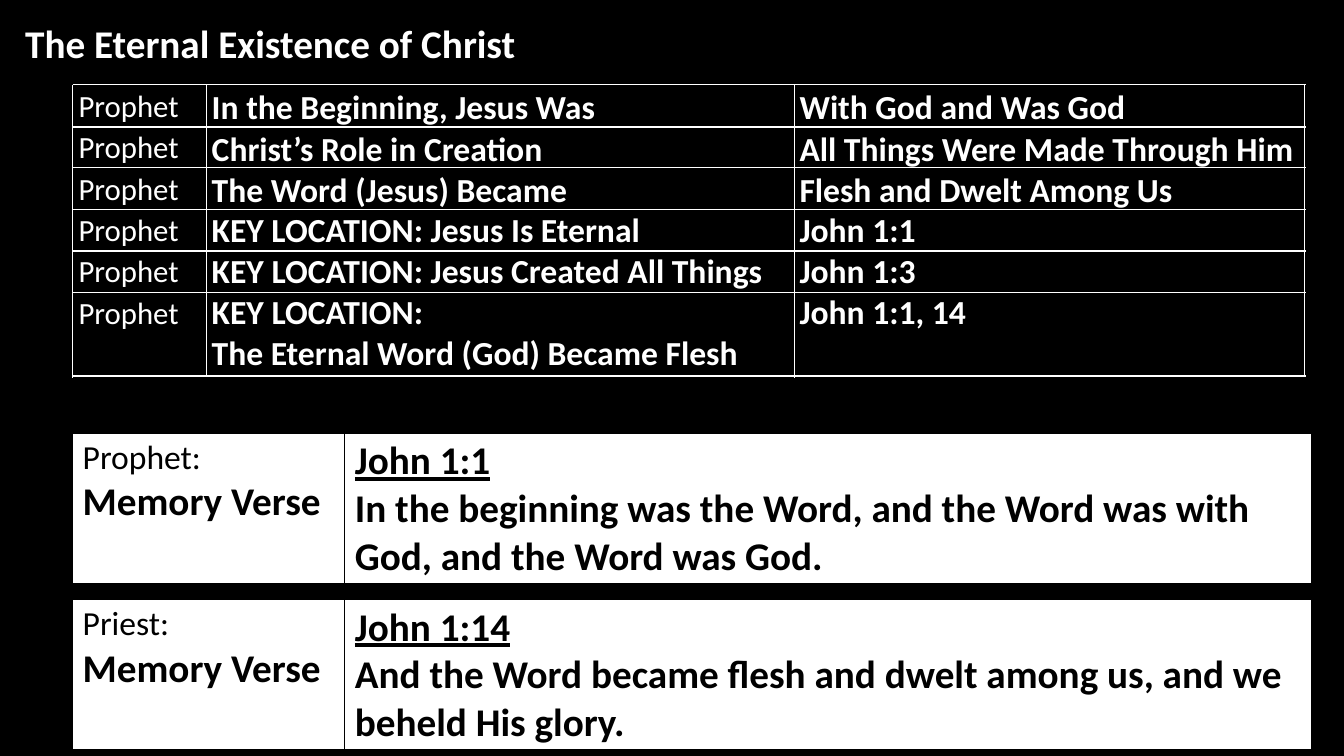
"""Build the slide on the eternal existence of Christ with its fact grid and memory verses."""
from dataclasses import dataclass

import lxml.etree
import pptx
import pptx.dml.color
import pptx.enum.shapes
import pptx.enum.text
import pptx.oxml.ns
import pptx.slide
import pptx.table
import pptx.text.text
import pptx.util

Inches = pptx.util.Inches
qualified = pptx.oxml.ns.qn


@dataclass(frozen=True)
class Theme:
    font: str = "Calibri"
    black: str = "000000"
    white: str = "FFFFFF"
    heading_size: int = 28
    fact_size: int = 24
    label_size: int = 22
    line_points: int = 1


@dataclass(frozen=True)
class Phrase:
    text: str
    width: float


@dataclass(frozen=True)
class Fact:
    top: float
    statement: tuple[Phrase, ...]
    answer: Phrase


@dataclass(frozen=True)
class MemoryVerse:
    role: str
    reference: str
    words: str
    top: float


THEME = Theme()
LEFT, RIGHT = 0.72, 12.95
ROW_PITCH = 0.41
LABEL_LEFT, STATEMENT_LEFT, ANSWER_LEFT = 0.78, 2.1, 7.93
FIRST_LABEL_TOP = 0.86
GRID_TOP = 0.84
HORIZONTAL_LINES = (GRID_TOP, 1.26, 1.66, 2.08, 2.49, 2.9, 3.73)
VERTICAL_LINES = ((LEFT, 3.75), (2.05, 3.73), (7.88, 3.75), (12.94, 3.73))
VERSE_COLUMNS = (2.7, 9.59)
VERSE_HEIGHT = 1.49

FACTS = (
    Fact(0.85, (Phrase("In the Beginning, Jesus Was", 3.99),), Phrase("With God and Was God", 3.42)),
    Fact(1.27, (Phrase("Christ’s Role in Creation", 3.49),),
         Phrase("All Things Were Made Through Him", 5.09)),
    Fact(1.68, (Phrase("The Word (Jesus) Became", 3.73),), Phrase("Flesh and Dwelt Among Us", 3.88)),
    Fact(2.07, (Phrase("KEY LOCATION: Jesus Is Eternal", 4.47),), Phrase("John 1:1", 1.33)),
    Fact(2.48, (Phrase("KEY LOCATION: Jesus Created All Things", 5.68),), Phrase("John 1:3", 1.33)),
    Fact(2.89, (Phrase("KEY LOCATION:", 2.38), Phrase("The Eternal Word (God) Became Flesh", 5.43)),
         Phrase("John 1:1, 14", 1.83)),
)
VERSES = (
    MemoryVerse("Priest:", "John 1:14",
                "And the Word became flesh and dwelt among us, and we beheld His glory.", 5.95),
    MemoryVerse("Prophet:", "John 1:1",
                "In the beginning was the Word, and the Word was with God, and the Word was God.", 4.3),
)


def to_color(value: str) -> pptx.dml.color.RGBColor:
    return pptx.dml.color.RGBColor.from_string(value)


def write_text(paragraph: pptx.text.text._Paragraph, text: str, *, size: int, color: str,
               bold: bool = True, underline: bool = False) -> None:
    paragraph.alignment = pptx.enum.text.PP_ALIGN.LEFT
    run = paragraph.add_run()
    run.text = text
    run.font.name = THEME.font
    run.font.size = pptx.util.Pt(size)
    run.font.bold = bold
    run.font.underline = underline
    run.font.color.rgb = to_color(color)


def add_title(slide: pptx.slide.Slide, text: str) -> None:
    title = slide.shapes.title
    title.left, title.top = Inches(0.15), Inches(0.14)
    title.width, title.height = Inches(11.66), Inches(0.57)
    frame = title.text_frame
    frame.word_wrap = True
    frame.auto_size = pptx.enum.text.MSO_AUTO_SIZE.SHAPE_TO_FIT_TEXT
    frame.vertical_anchor = pptx.enum.text.MSO_ANCHOR.TOP
    write_text(frame.paragraphs[0], text, size=THEME.heading_size, color=THEME.white)


def draw_borders(cell: pptx.table._Cell, color: str) -> None:
    properties = cell._tc.get_or_add_tcPr()
    for position, side in enumerate(("a:lnL", "a:lnR", "a:lnT", "a:lnB")):
        border = lxml.etree.Element(qualified(side), w=str(pptx.util.Pt(THEME.line_points)))
        fill = lxml.etree.SubElement(border, qualified("a:solidFill"))
        lxml.etree.SubElement(fill, qualified("a:srgbClr"), val=color)
        properties.insert(position, border)


def add_verse(slide: pptx.slide.Slide, verse: MemoryVerse) -> None:
    frame = slide.shapes.add_table(1, len(VERSE_COLUMNS), Inches(LEFT), Inches(verse.top),
                                   Inches(sum(VERSE_COLUMNS)), Inches(VERSE_HEIGHT))
    table = frame.table
    table.first_row = table.horz_banding = False
    for column, width in zip(table.columns, VERSE_COLUMNS):
        column.width = Inches(width)
    label, passage = table.rows[0].cells
    for cell in (label, passage):
        cell.margin_top, cell.margin_bottom = Inches(0.04), Inches(0.02)
        cell.fill.solid()
        cell.fill.fore_color.rgb = to_color(THEME.white)
        draw_borders(cell, THEME.black)
        cell.text_frame.add_paragraph()
    role, caption = label.text_frame.paragraphs
    reference, words = passage.text_frame.paragraphs
    write_text(role, verse.role, size=THEME.fact_size, color=THEME.black, bold=False)
    write_text(caption, "Memory Verse", size=THEME.heading_size, color=THEME.black)
    write_text(reference, verse.reference, size=THEME.heading_size, color=THEME.black, underline=True)
    write_text(words, verse.words, size=THEME.heading_size, color=THEME.black)


def add_line(slide: pptx.slide.Slide, start: tuple[float, float], end: tuple[float, float]) -> None:
    line = slide.shapes.add_connector(pptx.enum.shapes.MSO_CONNECTOR.STRAIGHT,
                                      *map(Inches, start), *map(Inches, end))
    line.line.color.rgb = to_color(THEME.white)
    line.line.width = pptx.util.Pt(THEME.line_points)
    lxml.etree.SubElement(line._element.spPr, qualified("a:effectLst"))


def add_phrase(slide: pptx.slide.Slide, phrase: Phrase, left: float, top: float, *,
               size: int = THEME.fact_size, height: float = 0.5, bold: bool = True) -> None:
    box = slide.shapes.add_textbox(Inches(left), Inches(top), Inches(phrase.width), Inches(height))
    frame = box.text_frame
    frame.word_wrap = False
    frame.auto_size = pptx.enum.text.MSO_AUTO_SIZE.SHAPE_TO_FIT_TEXT
    frame.margin_left = frame.margin_right = frame.margin_top = frame.margin_bottom = 0
    write_text(frame.paragraphs[0], phrase.text, size=size, color=THEME.white, bold=bold)


def add_facts(slide: pptx.slide.Slide) -> None:
    for x, bottom in VERTICAL_LINES:
        add_line(slide, (x, GRID_TOP), (x, bottom))
    for y in HORIZONTAL_LINES:
        add_line(slide, (LEFT, y), (RIGHT, y))
    for row, fact in enumerate(FACTS):
        add_phrase(slide, Phrase("Prophet", 1.16), LABEL_LEFT, FIRST_LABEL_TOP + row * ROW_PITCH,
                   size=THEME.label_size, height=0.45, bold=False)
        for index, phrase in enumerate(fact.statement):
            add_phrase(slide, phrase, STATEMENT_LEFT, fact.top + index * 0.4)
        add_phrase(slide, fact.answer, ANSWER_LEFT, fact.top)


def main() -> None:
    presentation = pptx.Presentation()
    presentation.slide_width, presentation.slide_height = Inches(13.33), Inches(7.5)
    slide = presentation.slides.add_slide(presentation.slide_layouts.get_by_name("Title Only"))
    slide.background.fill.solid()
    slide.background.fill.fore_color.rgb = to_color(THEME.black)
    add_title(slide, "The Eternal Existence of Christ")
    for verse in VERSES:
        add_verse(slide, verse)
    add_facts(slide)
    presentation.save("out.pptx")


if __name__ == "__main__":
    main()
